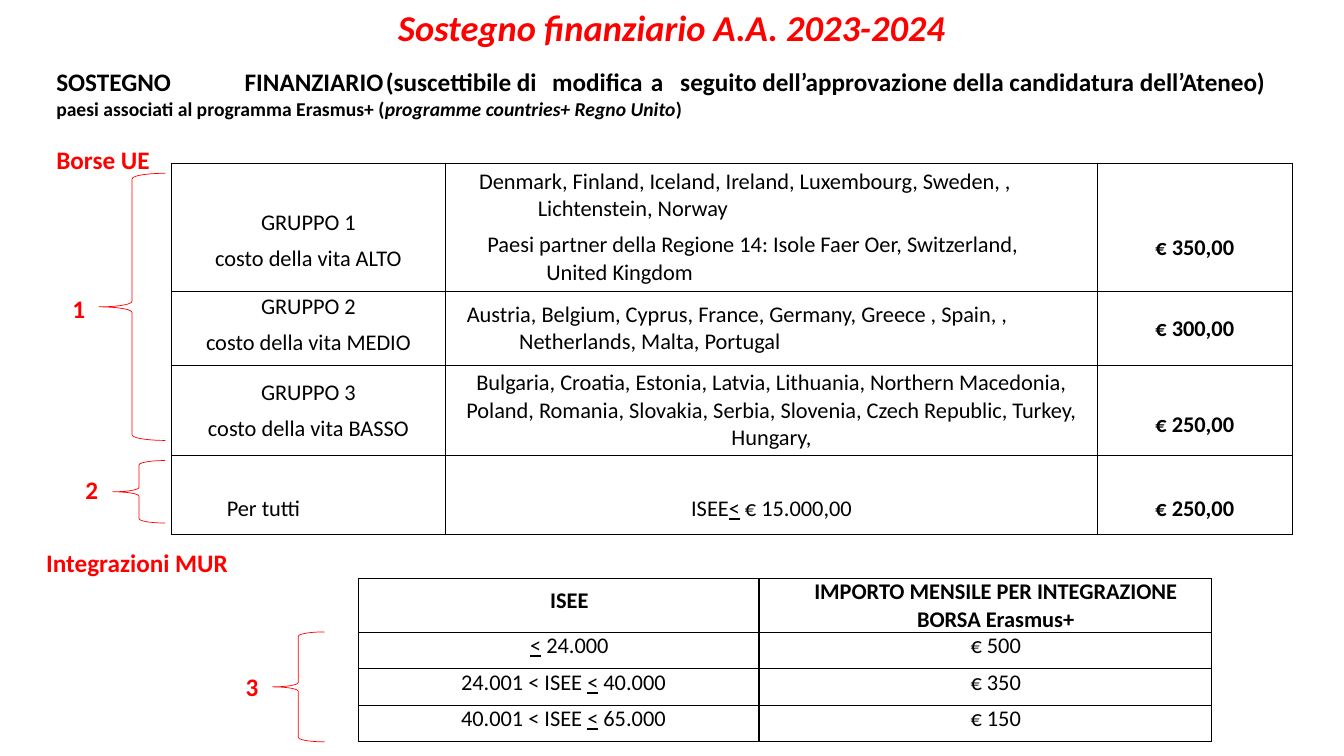
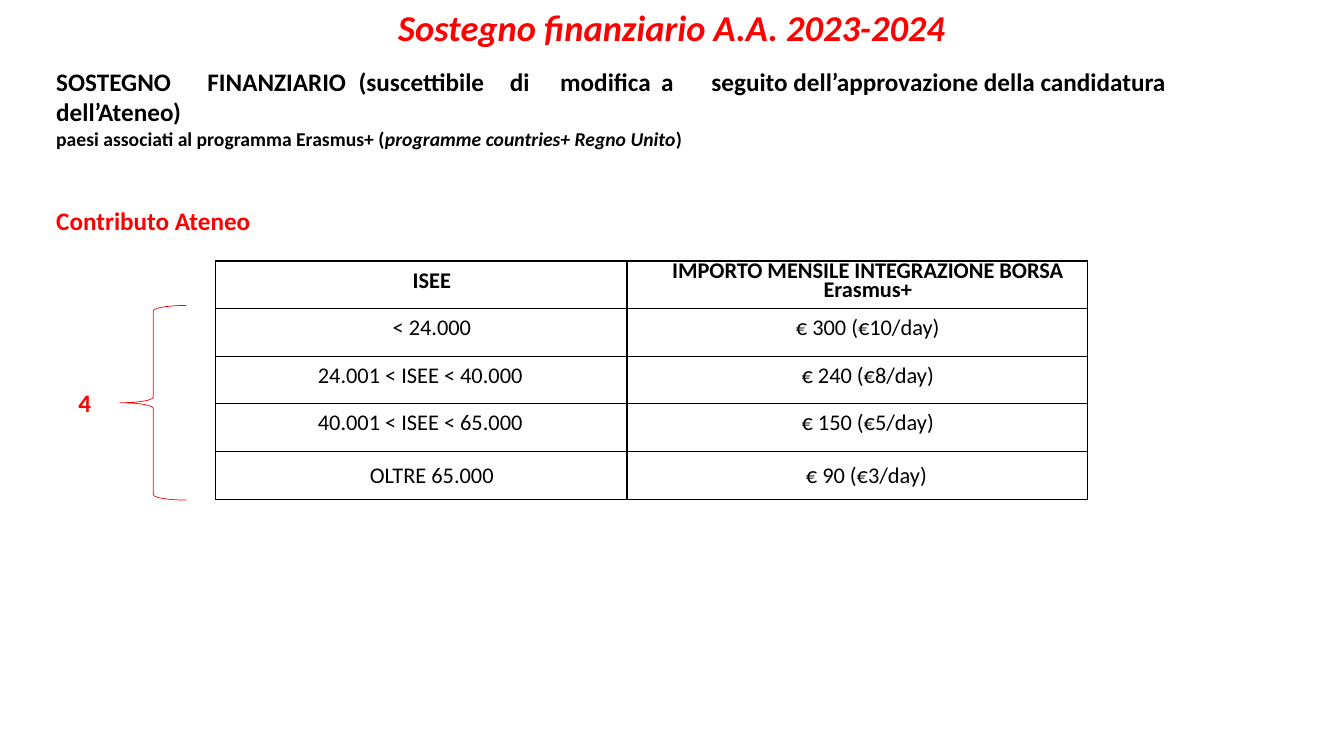
"""Build two slides on Erasmus+ financial support for 2023-2024."""
import pptx
import pptx.dml.color
import pptx.enum.shapes
import pptx.enum.text
import pptx.oxml
import pptx.oxml.ns
import pptx.util

Pt = pptx.util.Pt
RED = pptx.dml.color.RGBColor(0xFF, 0x00, 0x00)
BLACK = pptx.dml.color.RGBColor(0x00, 0x00, 0x00)
CENTER = pptx.enum.text.PP_ALIGN.CENTER
LEFT = pptx.enum.text.PP_ALIGN.LEFT
MIDDLE = pptx.enum.text.MSO_ANCHOR.MIDDLE
BRACE = pptx.enum.shapes.MSO_SHAPE.LEFT_BRACE
FONT = "Calibri"
NS = pptx.oxml.ns.nsdecls("a")


def write(p, text, size, color=BLACK, bold=True, mark="italic"):
    """Fill a paragraph, marking the pieces between underscores."""
    for i, piece in enumerate(text.split("_")):
        if piece:
            r = p.add_run()
            r.text = piece
            r.font.name, r.font.size, r.font.bold = FONT, Pt(size), bold
            r.font.color.rgb = color
            if i % 2:
                setattr(r.font, mark, True)


def add_label(s, x, y, w, h, text, size=18, align=CENTER, color=RED, wrap=True):
    """Add a text box with one paragraph and return its frame."""
    tf = s.shapes.add_textbox(Pt(x), Pt(y), Pt(w), Pt(h)).text_frame
    tf.word_wrap = wrap
    p = tf.paragraphs[0]
    p.alignment = align
    write(p, text, size, color)
    return tf


# style: alignment, left, right, first-line indent, line spacing, bold
STYLES = {
    "group": (CENTER, 3.6, 3.6, 0, None, False),
    "group_tight": (CENTER, 3.6, 3.6, 0, 14.6, False),
    "everyone": (LEFT, 39.6, 0, 0, None, False),
    "high": (LEFT, 66, 42, -42, None, False),
    "partner": (LEFT, 72, 42, -42, None, False),
    "medium": (LEFT, 52.6, 20, -37.4, None, False),
    "low": (CENTER, 6, 6, 0, None, False),
    "grant": (CENTER, 20, 20, 0, None, True),
    "isee_head": (CENTER, 100, 85, 0, 13.4, True),
    "isee": (CENTER, 100, 85, 0, 13.4, False),
    "isee_loose": (CENTER, 100, 85, 0, None, False),
    "range": (LEFT, 73, 0, 0, 13.4, False),
    "amount_head": (CENTER, 19, 4, 0, 13.4, True),
    "amount_head_loose": (CENTER, 19, 4, 0, None, True),
    "amount": (CENTER, 19, 4, 0, 13.4, False),
    "amount_loose": (CENTER, 17, 4, 0, None, False),
}

# cell: top inset, then (style, text) for each paragraph
GRANTS = [
    [(20, ("group", "GRUPPO 1"), ("group", "costo della vita ALTO")),
     (0, ("high", "Denmark, Finland, Iceland, Ireland, Luxembourg, Sweden, , Lichtenstein, Norway"),
      ("partner", "Paesi partner della Regione 14: Isole Faer Oer, Switzerland, United Kingdom")),
     (29.7, ("grant", "€ 350,00"))],
    [(0, ("group_tight", "GRUPPO 2"), ("group", "costo della vita MEDIO")),
     (0, ("medium", "Austria, Belgium, Cyprus, France, Germany, Greece , Spain, , "
                    "Netherlands, Malta, Portugal")),
     (0, ("grant", "€ 300,00"))],
    [(0, ("group", "GRUPPO 3"), ("group", "costo della vita BASSO")),
     (0, ("low", "Bulgaria, Croatia, Estonia, Latvia, Lithuania, Northern Macedonia, Poland, "
                 "Romania, Slovakia, Serbia, Slovenia, Czech Republic, Turkey, Hungary,")),
     (20, ("grant", "€ 250,00"))],
    [(20, ("everyone", "Per tutti")),
     (20, ("low", "ISEE_<_ € 15.000,00")),
     (20, ("grant", "€ 250,00"))],
]
MINISTRY = [
    [(0, ("isee_head", "ISEE")),
     (0, ("amount_head_loose", "IMPORTO MENSILE PER INTEGRAZIONE BORSA Erasmus+"))],
    [(0, ("isee", "_<_ 24.000")), (0, ("amount", "€ 500"))],
    [(0, ("range", "24.001 < ISEE _<_ 40.000")), (0, ("amount", "€ 350"))],
    [(0, ("range", "40.001 < ISEE _<_ 65.000")), (0, ("amount", "€ 150"))],
]
UNIVERSITY = [
    [(0, ("isee_head", "ISEE")),
     (0, ("amount_head", "IMPORTO MENSILE INTEGRAZIONE BORSA Erasmus+"))],
    [(0, ("isee", "< 24.000")), (0, ("amount", "€ 300 (€10/day)"))],
    [(0, ("range", "24.001 < ISEE < 40.000")), (0, ("amount", "€ 240 (€8/day)"))],
    [(0, ("range", "40.001 < ISEE < 65.000")), (0, ("amount", "€ 150 (€5/day)"))],
    [(0, ("isee_loose", "OLTRE 65.000")), (0, ("amount_loose", "€ 90 (€3/day)"))],
]

# table: left, top, column widths, row heights, rows
# brace: left, top, width, height, number, number left, number top
SLIDES = [
    {"section": "Borse UE", "gap": 17, "width": 894.2, "height": 85,
     "tabs": (134.6, 235.4, 329, 354.2, 424.8, 445.7),
     "tables": [(122.4, 116.6, (195.8, 465.8, 139), (91.4, 53.3, 64.1, 56.2), GRANTS),
                (256.3, 413.3, (285.8, 323.3), (26,) * 4, MINISTRY)],
     "braces": [(70.6, 123.8, 47.5, 190.8, "1", 41.8, 205.9),
                (80.6, 329, 37.4, 44.6, "2", 51.1, 335.5),
                (194.4, 451.4, 37.4, 78.5, "3", 165.6, 475.9)]},
    {"section": "Contributo Ateneo", "gap": 39, "width": 878, "height": 106.6,
     "tabs": (108, 216, 324, 360, 432, 468),
     "tables": [(154.1, 186.5, (293.8, 329), (34,) * 4 + (34.6,), UNIVERSITY)],
     "braces": [(85.7, 218.2, 47.5, 139, "4", 46.1, 272.9)]},
]

prs = pptx.Presentation()
prs.slide_width, prs.slide_height = Pt(960), Pt(540)

for page in SLIDES:
    s = prs.slides.add_slide(prs.slide_layouts[6])
    add_label(s, 0, 0, 960, 39, "_Sostegno finanziario A.A. 2023-2024_", 26)

    tf = add_label(s, 33.1, 43.9, page["width"], page["height"],
                   "SOSTEGNO\tFINANZIARIO\t(suscettibile\tdi\tmodifica\ta\t"
                   "seguito dell’approvazione della candidatura dell’Ateneo)",
                   align=LEFT, color=BLACK)
    stops = "".join(f'<a:tab pos="{Pt(x)}" algn="l"/>' for x in page["tabs"])
    tf.paragraphs[0]._p.get_or_add_pPr().append(
        pptx.oxml.parse_xml(f"<a:tabLst {NS}>{stops}</a:tabLst>"))
    write(tf.add_paragraph(),
          "paesi associati al programma Erasmus+ (_programme countries+ Regno Unito_)", 14)
    p = tf.add_paragraph()
    p.space_before = Pt(page["gap"])
    write(p, page["section"], 18, RED)

    for x, y, widths, heights, rows in page["tables"]:
        table = s.shapes.add_table(len(rows), len(widths), Pt(x), Pt(y),
                                   Pt(sum(widths)), Pt(sum(heights))).table
        table.first_row = table.horz_banding = False
        for col, width in zip(table.columns, widths):
            col.width = Pt(width)
        for row, height, cells in zip(table.rows, heights, rows):
            row.height = Pt(height)
            for cell, (top, *paragraphs) in zip(row.cells, cells):
                cell.margin_left = cell.margin_right = cell.margin_bottom = 0
                cell.margin_top = Pt(top)
                cell.vertical_anchor = MIDDLE
                tcPr = cell._tc.get_or_add_tcPr()
                for side in ("lnL", "lnR", "lnT", "lnB"):
                    tcPr.append(pptx.oxml.parse_xml(
                        f'<a:{side} {NS} w="{Pt(1)}"><a:solidFill><a:srgbClr val="{BLACK}"/>'
                        f"</a:solidFill></a:{side}>"))
                cell.fill.background()
                for i, (style, text) in enumerate(paragraphs):
                    align, left, right, indent, leading, bold = STYLES[style]
                    p = cell.text_frame.add_paragraph() if i else cell.text_frame.paragraphs[0]
                    p.alignment = align
                    if i:
                        p.space_before = Pt(6)
                    if leading:
                        p.line_spacing = Pt(leading)
                    pPr = p._p.get_or_add_pPr()
                    for name, value in (("marL", left), ("marR", right), ("indent", indent)):
                        pPr.set(name, str(Pt(value)))
                    write(p, text, 16, bold=bold, mark="underline")

    for x, y, w, h, number, number_x, number_y in page["braces"]:
        sp = s.shapes.add_shape(BRACE, Pt(x), Pt(y), Pt(w), Pt(h))
        sp.shadow.inherit = False
        sp.fill.background()
        sp.line.color.rgb = RED
        sp.line.width = Pt(0.5)
        add_label(s, number_x, number_y, 28.8, 28.8, number)

add_label(prs.slides[0], 25.9, 387.4, 145.4, 28.8, "Integrazioni MUR", align=LEFT, wrap=False)

prs.save("out.pptx")
